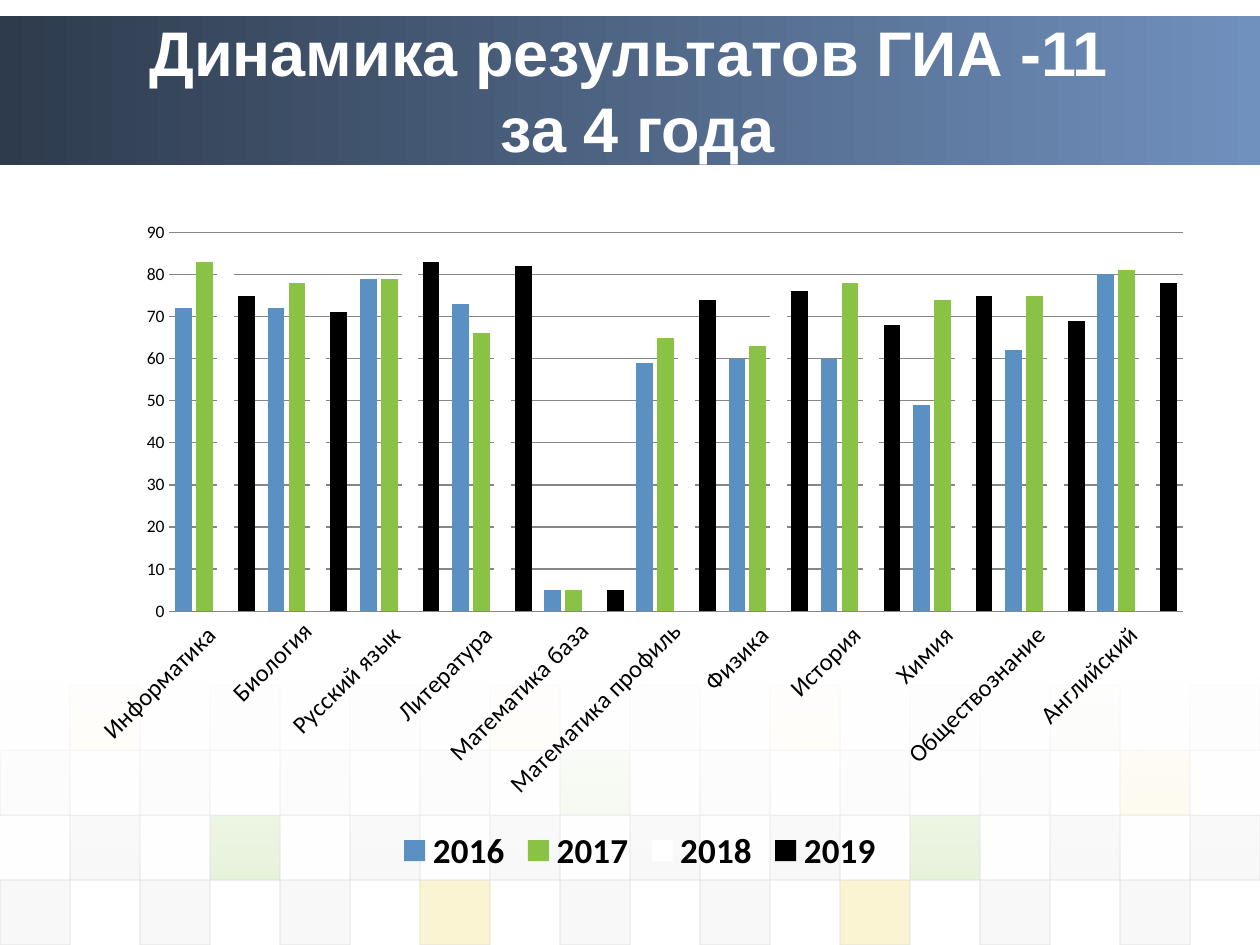
import pptx
import pptx.util
import pptx.chart.data
import pptx.dml.color
import pptx.enum.chart
import pptx.enum.shapes
import pptx.enum.text
import pptx.oxml.ns
import lxml.etree

TITLE = "Динамика результатов ГИА -11 \vза 4 года"
SUBJECTS = ["Информатика ", "Биология", "Русский язык ", "Литература ",
            "Математика база", "Математика профиль", "Физика ", "История ",
            "Химия ", "Обществознание ", "Английский "]
RESULTS = {
    "2016": [72, 72, 79, 73, 5, 59, 60, 60, 49, 62, 80],
    "2017": [83, 78, 79, 66, 5, 65, 63, 78, 74, 75, 81],
    "2018": [84, 62, 82, 69, 4, 64, 71, 65, 68, 70, 72],
    "2019": [75, 71, 83, 82, 5, 74, 76, 68, 75, 69, 78],
}
TILE_ROWS = [
    (1, 5, "yellow pale pale yellow gray yellow pale green pale"),
    (0, 10, "gray gray gray gray green gray gray gray yellow"),
    (1, 20, "gray green gray gray gray gray green gray gray"),
    (0, 20, "gray gray gray yellow gray gray yellow gray gray"),
]
THEME = {
    "gray": "DDDDDD", "pale": "EAEAEA", "green": "8AC246", "yellow": "EFC821",
    "white": "FFFFFF", "black": "000000", "grid": "868686",
    "banner": ("2E3B4D", "7090BD"),
    "series": ("5A90C2", "8AC246", "FFFFFF", "000000"),
    "title_font": "Arial", "chart_font": "Calibri",
    "title_size": 36, "value_size": 10, "subject_size": 14, "legend_size": 20,
}
WIDTH, HEIGHT = 10, 7.5
TILE_WIDTH, TILE_HEIGHT = WIDTH / 18, 0.515
TILES_TOP = HEIGHT - len(TILE_ROWS) * TILE_HEIGHT


def color(name):
    return pptx.dml.color.RGBColor.from_string(THEME.get(name, name))


def inches(*lengths):
    return [pptx.util.Inches(length) for length in lengths]


def assign(target, values):
    for name, value in values.items():
        setattr(target, name, value)


def set_alpha(color_element, percent):
    alpha = lxml.etree.SubElement(color_element, pptx.oxml.ns.qn("a:alpha"))
    alpha.set("val", str(percent * 1000))


def add_rectangle(slide, *box):
    shape = slide.shapes.add_shape(
        pptx.enum.shapes.MSO_SHAPE.RECTANGLE, *inches(*box))
    shape.shadow.inherit = False
    return shape


def add_gradient(slide, box, colors, angle, alphas=(100, 100)):
    shape = add_rectangle(slide, *box)
    shape.line.fill.background()
    shape.fill.gradient()
    shape.fill.gradient_angle = angle
    for stop, value in zip(shape.fill.gradient_stops, colors):
        stop.color.rgb = color(value)
    stops = shape.element.xpath("./p:spPr/a:gradFill/a:gsLst/a:gs/a:srgbClr")
    for element, alpha in zip(stops, alphas):
        set_alpha(element, alpha)


def add_tiles(slide):
    for row, (offset, alpha, names) in enumerate(TILE_ROWS):
        for index, name in enumerate(names.split()):
            tile = add_rectangle(
                slide, (2 * index + offset) * TILE_WIDTH,
                TILES_TOP + row * TILE_HEIGHT, TILE_WIDTH, TILE_HEIGHT)
            tile.fill.solid()
            tile.fill.fore_color.rgb = color(name)
            tile.line.color.rgb = color("gray")
            tile.line.width = pptx.util.Pt(0.75)
            set_alpha(tile.element.xpath("./p:spPr/a:solidFill/a:srgbClr")[0], alpha)
            set_alpha(tile.element.xpath("./p:spPr/a:ln/a:solidFill/a:srgbClr")[0], 60)


def add_title(slide):
    frame = slide.shapes.add_textbox(*inches(0.12, 0.25, 9.88, 0.92)).text_frame
    assign(frame, {"word_wrap": True,
                   "vertical_anchor": pptx.enum.text.MSO_ANCHOR.MIDDLE})
    paragraph = frame.paragraphs[0]
    paragraph.text = TITLE
    paragraph.alignment = pptx.enum.text.PP_ALIGN.CENTER
    for run in paragraph.runs:
        assign(run.font, {"name": THEME["title_font"], "bold": True,
                          "size": pptx.util.Pt(THEME["title_size"])})
        run.font.color.rgb = color("white")


def style_font(font, size, bold=False):
    assign(font, {"name": THEME["chart_font"], "bold": bold,
                  "size": pptx.util.Pt(THEME[size])})
    font.color.rgb = color("black")


def add_results_chart(slide):
    data = pptx.chart.data.CategoryChartData()
    data.categories = SUBJECTS
    for year, values in RESULTS.items():
        data.add_series(year, values)
    chart = slide.shapes.add_chart(
        pptx.enum.chart.XL_CHART_TYPE.COLUMN_CLUSTERED,
        *inches(0.59, 1.66, 8.98, 5.32), data).chart
    assign(chart, {"has_title": False, "has_legend": True})
    style_font(chart.font, "value_size")
    plot = chart.plots[0]
    assign(plot, {"gap_width": 75, "overlap": -25, "vary_by_categories": False})
    for series, value in zip(plot.series, THEME["series"]):
        series.format.fill.solid()
        series.format.fill.fore_color.rgb = color(value)
        series.invert_if_negative = False
    assign(chart.legend, {"include_in_layout": False,
                          "position": pptx.enum.chart.XL_LEGEND_POSITION.BOTTOM})
    style_font(chart.legend.font, "legend_size", True)

    no_tick = pptx.enum.chart.XL_TICK_MARK.NONE
    subject_axis, value_axis = chart.category_axis, chart.value_axis
    assign(subject_axis, {"major_tick_mark": no_tick, "minor_tick_mark": no_tick})
    assign(value_axis, {"major_tick_mark": no_tick, "minor_tick_mark": no_tick,
                        "minimum_scale": 0, "maximum_scale": 90, "major_unit": 10,
                        "has_major_gridlines": True})
    style_font(subject_axis.tick_labels.font, "subject_size")
    style_font(value_axis.tick_labels.font, "value_size")
    for body in chart.element.xpath(".//c:catAx/c:txPr/a:bodyPr"):
        body.set("rot", str(-45 * 60000))
        body.set("vert", "horz")
    value_axis.format.line.fill.background()
    for line in (subject_axis.format.line, value_axis.major_gridlines.format.line):
        line.color.rgb = color("grid")
        line.width = pptx.util.Pt(0.75)


def main():
    presentation = pptx.Presentation()
    assign(presentation, dict(zip(("slide_width", "slide_height"),
                                  inches(WIDTH, HEIGHT))))
    slide = presentation.slides.add_slide(presentation.slide_layouts[6])
    add_gradient(slide, (0, 0.13, WIDTH, 1.18), THEME["banner"], 0)
    add_tiles(slide)
    add_gradient(slide, (0, 5.37, WIDTH, 1.62), ("white", "white"), 270, (90, 0))
    add_title(slide)
    add_results_chart(slide)
    presentation.save("out.pptx")


if __name__ == "__main__":
    main()
